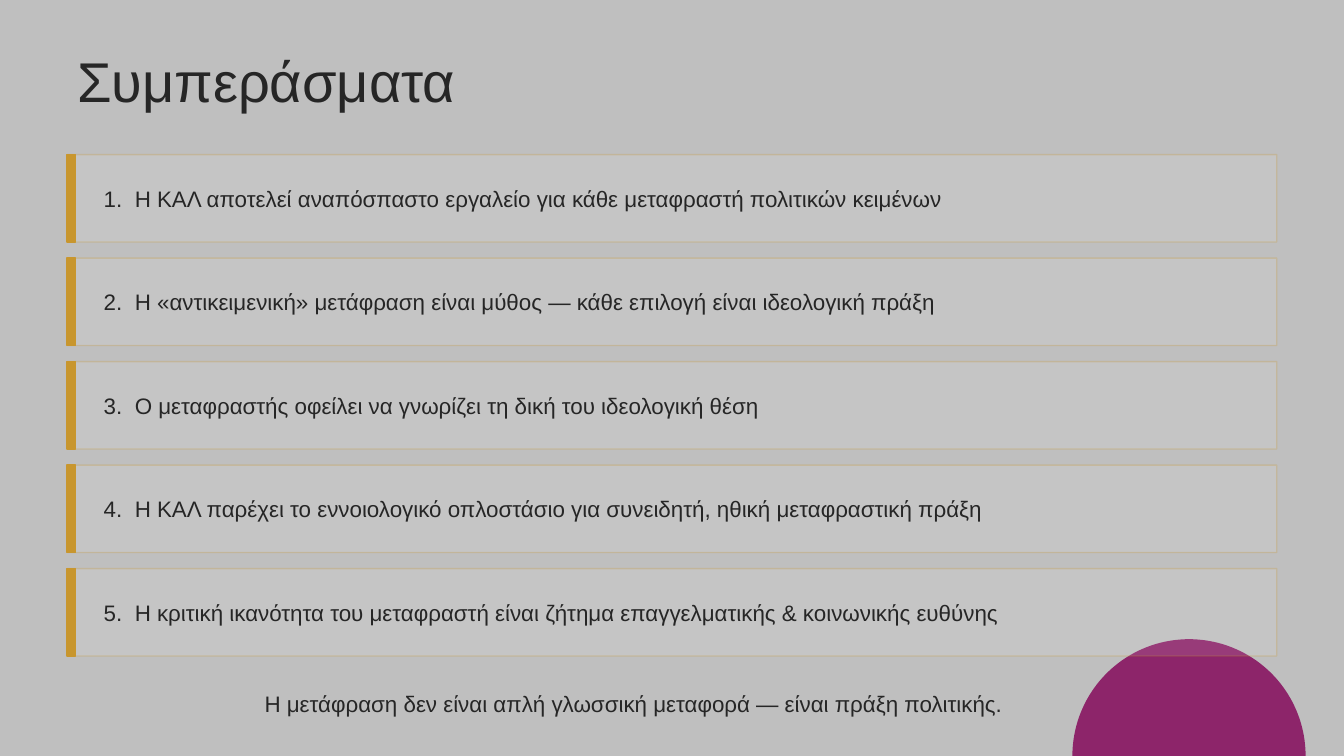
import math

import pptx
import pptx.util
import pptx.dml.color
import pptx.enum.shapes
import pptx.enum.text
import pptx.oxml
import pptx.oxml.ns

Pt = pptx.util.Pt
RGB = pptx.dml.color.RGBColor
ALIGN = pptx.enum.text.PP_ALIGN
RECT = pptx.enum.shapes.MSO_SHAPE.RECTANGLE

GREY = RGB(0xBF, 0xBF, 0xBF)
WHITE = RGB(0xFF, 0xFF, 0xFF)
GOLD = RGB(0xC8, 0x96, 0x2E)
PLUM = RGB(0x8D, 0x25, 0x6A)
INK = RGB(0x26, 0x26, 0x26)

TITLE = "Συμπεράσματα"
POINTS = [
    "Η ΚΑΛ αποτελεί αναπόσπαστο εργαλείο για κάθε μεταφραστή πολιτικών κειμένων",
    "Η «αντικειμενική» μετάφραση είναι μύθος — κάθε επιλογή είναι ιδεολογική πράξη",
    "Ο μεταφραστής οφείλει να γνωρίζει τη δική του ιδεολογική θέση",
    "Η ΚΑΛ παρέχει το εννοιολογικό οπλοστάσιο για συνειδητή, ηθική μεταφραστική πράξη",
    "Η κριτική ικανότητα του μεταφραστή είναι ζήτημα επαγγελματικής & κοινωνικής ευθύνης",
]
CLOSE = "Η μετάφραση δεν είναι απλή γλωσσική μεταφορά — είναι πράξη πολιτικής."


def style(item, form):
    for name, value in form.items():
        setattr(item, name, value)


def fade(fill, part):
    """Make a solid fill show only the given percentage."""
    tone = fill._xPr.find(".//" + pptx.oxml.ns.qn("a:srgbClr"))
    tone.append(pptx.oxml.parse_xml(
        f'<a:alpha {pptx.oxml.ns.nsdecls("a")} val="{part * 1000}"/>'))


def write(shape, text, size=16, align=ALIGN.LEFT, tab=None):
    frame = shape.text_frame
    style(frame, {
        "word_wrap": True,
        "auto_size": pptx.enum.text.MSO_AUTO_SIZE.NONE,
        "vertical_anchor": pptx.enum.text.MSO_ANCHOR.MIDDLE,
    })
    para = frame.paragraphs[0]
    para.text = text
    para.alignment = align
    if tab:
        para._p.get_or_add_pPr().append(pptx.oxml.parse_xml(
            f'<a:tabLst {pptx.oxml.ns.nsdecls("a")}>'
            f'<a:tab pos="{Pt(tab)}" algn="l"/></a:tabLst>'))
    font = para.runs[0].font
    style(font, {"name": "Arial", "size": Pt(size), "bold": False})
    font.color.rgb = INK


def label(slide, box, text, **form):
    write(slide.shapes.add_textbox(*map(Pt, box)), text, **form)


def panel(slide, box, tint, fill=100, line=100):
    shape = slide.shapes.add_shape(RECT, *map(Pt, box))
    shape.shadow.inherit = False
    shape.line.width = Pt(1)
    for paint, tone, part in ((shape.fill, tint, fill),
                              (shape.line.fill, GOLD, line)):
        paint.solid()
        paint.fore_color.rgb = tone
        if part < 100:
            fade(paint, part)


def dome(slide, box):
    """Half disc that fills the box, flat side down."""
    left, top, width, height = box
    mid, base = left + width / 2, top + height
    rim = [(Pt(mid - width / 2 * math.cos(math.radians(turn))),
            Pt(base - height * math.sin(math.radians(turn))))
           for turn in range(0, 181, 2)]
    path = slide.shapes.build_freeform(*rim[0])
    path.add_line_segments(rim[1:], close=True)
    shape = path.convert_to_shape()
    shape.shadow.inherit = False
    shape.fill.solid()
    shape.fill.fore_color.rgb = PLUM
    shape.line.fill.background()


def head(slide, box):
    title = slide.shapes.title
    style(title, dict(zip(("left", "top", "width", "height"), map(Pt, box))))
    write(title, TITLE, size=40)


def row(slide, box, text):
    left, top, width, height = box
    panel(slide, box, WHITE, fill=10, line=25)
    panel(slide, (left, top, 6, height), GOLD)
    label(slide, (left + 19, top + 2, width - 29, height - 4), text, tab=22.2)


def rows(slide, box):
    left, top, width, height = box
    gap = 11.5
    tall = (height + gap) / len(POINTS) - gap
    for num, text in enumerate(POINTS):
        spot = (left, top + num * (tall + gap), width, tall)
        row(slide, spot, f"{num + 1}.\t{text}")


def main():
    deck = pptx.Presentation()
    deck.slide_width, deck.slide_height = Pt(960), Pt(540)
    slide = deck.slides.add_slide(deck.slide_layouts[5])
    slide.background.fill.solid()
    slide.background.fill.fore_color.rgb = GREY

    # Corner ornament
    dome(slide, (766, 456.6, 166.6, 83.4))
    # Title
    head(slide, (48, 24, 864, 67))
    # Numbered conclusions
    rows(slide, (48, 110.4, 864, 358.2))
    # Closing line
    label(slide, (20.6, 489, 864, 27), CLOSE, align=ALIGN.CENTER)

    deck.save("out.pptx")


if __name__ == "__main__":
    main()
